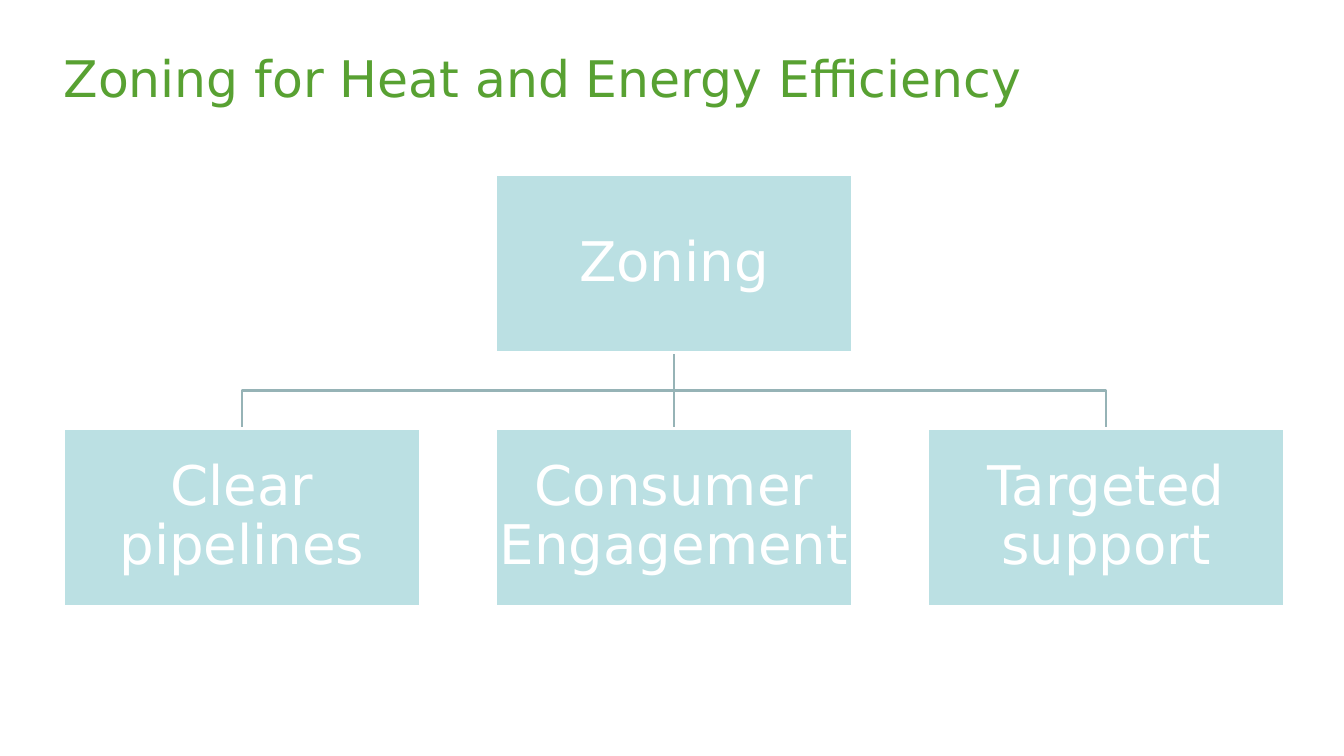
"""Build the zoning hierarchy slide."""
from dataclasses import dataclass

from lxml import etree
from pptx import Presentation
from pptx.dml.color import RGBColor
from pptx.enum.shapes import MSO_CONNECTOR, MSO_SHAPE
from pptx.enum.text import MSO_ANCHOR, MSO_AUTO_SIZE, PP_ALIGN
from pptx.oxml.ns import qn
from pptx.util import Inches, Pt

RECT = MSO_SHAPE.RECTANGLE
STRAIGHT = MSO_CONNECTOR.STRAIGHT
TOP, MIDDLE = MSO_ANCHOR.TOP, MSO_ANCHOR.MIDDLE
LEFT, CENTER = PP_ALIGN.LEFT, PP_ALIGN.CENTER
NO_FIT = MSO_AUTO_SIZE.NONE


@dataclass(frozen=True)
class Theme:
    """Colours, font and sizes of the slide."""
    green: str = "58A132"
    aqua: str = "BBE0E3"
    slate: str = "96B3B6"
    white: str = "FFFFFF"
    font: str = "DejaVu Sans"
    head: int = 36
    label: int = 39
    line: int = 2


@dataclass(frozen=True)
class Grid:
    """Columns and rows of the chart, in inches."""
    left: float = 0.63
    top: float = 1.73
    wide: float = 3.54
    high: float = 1.77
    col: float = 4.285
    row: float = 2.52

    def cell(self, col, row):
        """Return left, top, width and height of a cell."""
        x, y = self.left + col * self.col, self.top + row * self.row
        return [Inches(v) for v in (x, y, self.wide, self.high)]


THEME, GRID = Theme(), Grid()


def write(shape, text, size, color, align, anchor, inset):
    """Put formatted text into a shape."""
    frame = shape.text_frame
    frame.text = text
    frame.word_wrap = True
    frame.auto_size = NO_FIT
    frame.vertical_anchor = anchor
    frame.margin_left = frame.margin_right = Inches(inset)
    frame.margin_top = frame.margin_bottom = Inches(inset)
    para = frame.paragraphs[0]
    para.alignment = align
    font = para.runs[0].font
    font.name, font.size = THEME.font, Pt(size)
    font.color.rgb = RGBColor.from_string(color)
    return para


def stroke(shape, color):
    """Set the line of a shape or connector."""
    shape.line.color.rgb = RGBColor.from_string(color)
    shape.line.width = Pt(THEME.line)


def add_head(slide, text):
    """Place and format the title."""
    head = slide.shapes.title
    head.left, head.top = Inches(GRID.left), Inches(0.47)
    head.width, head.height = Inches(12.15), Inches(1.25)
    write(head, text, THEME.head, THEME.green, LEFT, TOP, 0)


def add_box(slide, text, col, row):
    """Draw one labelled box on the grid."""
    box = slide.shapes.add_shape(RECT, *GRID.cell(col, row))
    box.shadow.inherit = False
    box.fill.solid()
    box.fill.fore_color.rgb = RGBColor.from_string(THEME.aqua)
    stroke(box, THEME.white)
    para = write(box, text, THEME.label, THEME.white, CENTER, MIDDLE, 0.03)
    para.line_spacing = 0.9
    return box


def add_stem(slide, root, leaf):
    """Join two boxes in one column with a straight line."""
    stem = slide.shapes.add_connector(STRAIGHT, 0, 0, 0, 0)
    stem.begin_connect(root, 2)
    stem.end_connect(leaf, 0)
    stroke(stem, THEME.slate)
    props = stem.element.find(qn("p:spPr"))
    etree.SubElement(props, qn("a:effectLst"))
    root.element.addprevious(stem.element)


def add_elbow(slide, root, leaf):
    """Join two boxes with a bent line halfway between their rows."""
    start, end = root.left + root.width // 2, leaf.left + leaf.width // 2
    base = root.top + root.height
    mid = (base + leaf.top) // 2
    pen = slide.shapes.build_freeform(start, base)
    pen.add_line_segments([(start, mid), (end, mid), (end, leaf.top)], close=False)
    elbow = pen.convert_to_shape()
    elbow.shadow.inherit = False
    elbow.fill.background()
    stroke(elbow, THEME.slate)
    root.element.addprevious(elbow.element)


def main():
    """Build and save the slide."""
    deck = Presentation()
    deck.slide_width, deck.slide_height = Inches(13.33), Inches(7.5)
    slide = deck.slides.add_slide(deck.slide_layouts[5])
    add_head(slide, "Zoning for Heat and Energy Efficiency")
    root = add_box(slide, "Zoning", 1, 0)
    labels = ("Clear pipelines", "Consumer Engagement", "Targeted support")
    for col, label in enumerate(labels):
        leaf = add_box(slide, label, col, 1)
        join = add_stem if leaf.left == root.left else add_elbow
        join(slide, root, leaf)
    deck.save("out.pptx")


if __name__ == "__main__":
    main()
